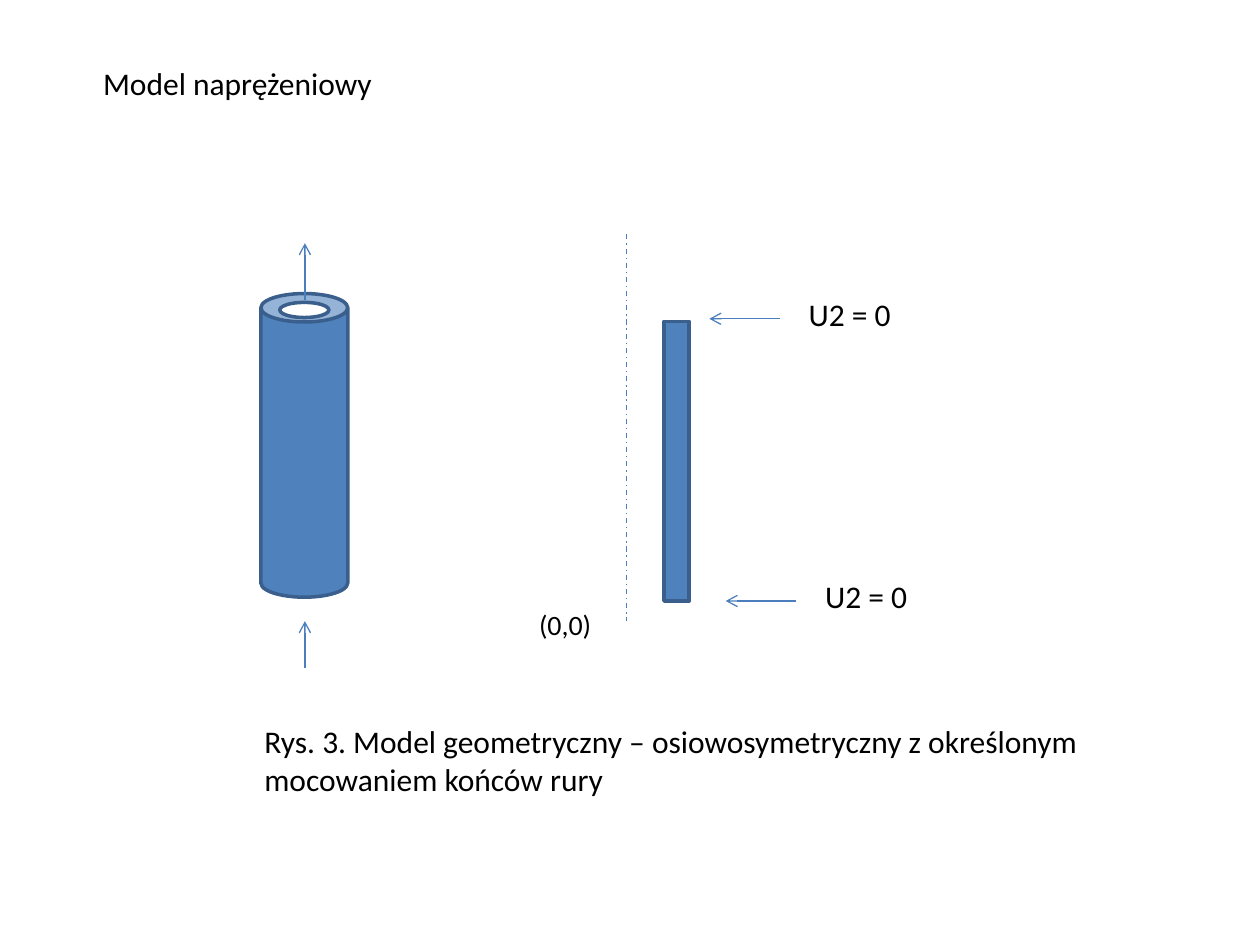
"""Build the stress model slide: a pipe and its axisymmetric section with fixed ends."""
from dataclasses import dataclass

from lxml import etree
from pptx import Presentation
from pptx.dml.color import RGBColor
from pptx.enum import dml, shapes, text
from pptx.oxml import ns
from pptx.util import Inches, Pt


@dataclass(frozen=True)
class Theme:
    font: str = "Calibri"
    ink: str = "000000"
    steel: str = "4F81BD"
    edge: str = "3A5F8C"
    stroke: str = "4B7EBC"
    hollow: str = "FFFFFF"
    body_size: float = 18
    origin_size: float = 16
    edge_width: float = 2
    stroke_width: float = 0.75


@dataclass(frozen=True)
class Box:
    left: float
    top: float
    width: float
    height: float

    def emu(self) -> tuple:
        return tuple(Inches(n) for n in (self.left, self.top, self.width, self.height))


@dataclass(frozen=True)
class Label:
    wording: str
    box: Box
    size: float
    wrap: bool = False


@dataclass(frozen=True)
class Solid:
    kind: shapes.MSO_SHAPE
    box: Box
    fill: str
    adjustments: tuple = ()


@dataclass(frozen=True)
class Stroke:
    start: tuple
    end: tuple
    is_axis: bool = False


THEME = Theme()
PIPE_X = 2.42
AXIS_X = 4.97
SUPPORT_LENGTH = 0.56
SUPPORTS = ((5.63, 2.53), (5.76, 4.77))

SOLIDS = (
    Solid(shapes.MSO_SHAPE.CAN, Box(2.07, 2.33, 0.69, 2.41), THEME.steel, (0.327,)),
    Solid(shapes.MSO_SHAPE.OVAL, Box(2.22, 2.4, 0.39, 0.12), THEME.hollow),
    Solid(shapes.MSO_SHAPE.RECTANGLE, Box(5.27, 2.55, 0.2, 2.22), THEME.steel),
)
STROKES = (
    Stroke((PIPE_X, 5.3), (PIPE_X, 4.93)),
    Stroke((PIPE_X, 2.38), (PIPE_X, 1.93)),
    Stroke((AXIS_X, 1.86), (AXIS_X, 4.93), is_axis=True),
    *(Stroke((x + SUPPORT_LENGTH, y), (x, y)) for x, y in SUPPORTS),
)
LABELS = (
    Label("Model naprężeniowy", Box(0.72, 0.46, 2.36, 0.4), THEME.body_size),
    Label("Rys. 3. Model geometryczny – osiowosymetryczny z określonym mocowaniem końców rury",
          Box(2, 5.68, 6.86, 0.71), THEME.body_size, wrap=True),
    Label("(0,0)", Box(4.18, 4.77, 0.78, 0.44), THEME.origin_size),
    *(Label("U2 = 0", Box(x + 0.69, y - 0.24, 1.08, 0.47), THEME.body_size)
      for x, y in SUPPORTS),
)


def draw_solid(slide, solid: Solid) -> None:
    body = slide.shapes.add_shape(solid.kind, *solid.box.emu())
    body.shadow.inherit = False
    for index, value in enumerate(solid.adjustments):
        body.adjustments[index] = value
    body.fill.solid()
    body.fill.fore_color.rgb = RGBColor.from_string(solid.fill)
    body.line.color.rgb = RGBColor.from_string(THEME.edge)
    body.line.width = Pt(THEME.edge_width)


def draw_stroke(slide, stroke: Stroke) -> None:
    ends = (Inches(n) for n in (*stroke.start, *stroke.end))
    connector = slide.shapes.add_connector(shapes.MSO_CONNECTOR.STRAIGHT, *ends)
    connector.line.color.rgb = RGBColor.from_string(THEME.stroke)
    connector.line.width = Pt(THEME.stroke_width)
    if stroke.is_axis:
        connector.line.dash_style = dml.MSO_LINE.DASH_DOT
    else:
        outline = connector.line._get_or_add_ln()
        etree.SubElement(outline, ns.qn("a:tailEnd"), type="arrow")
    etree.SubElement(connector._element.spPr, ns.qn("a:effectLst"))


def draw_label(slide, label: Label) -> None:
    frame = slide.shapes.add_textbox(*label.box.emu()).text_frame
    frame.text = label.wording
    frame.word_wrap = label.wrap
    frame.auto_size = text.MSO_AUTO_SIZE.SHAPE_TO_FIT_TEXT
    font = frame.paragraphs[0].runs[0].font
    font.name = THEME.font
    font.size = Pt(label.size)
    font.color.rgb = RGBColor.from_string(THEME.ink)


def main() -> None:
    deck = Presentation()
    deck.slide_width, deck.slide_height = Inches(10), Inches(7.5)
    slide = deck.slides.add_slide(deck.slide_layouts[6])
    for solid in SOLIDS:
        draw_solid(slide, solid)
    for stroke in STROKES:
        draw_stroke(slide, stroke)
    for label in LABELS:
        draw_label(slide, label)
    deck.save("out.pptx")


if __name__ == "__main__":
    main()
